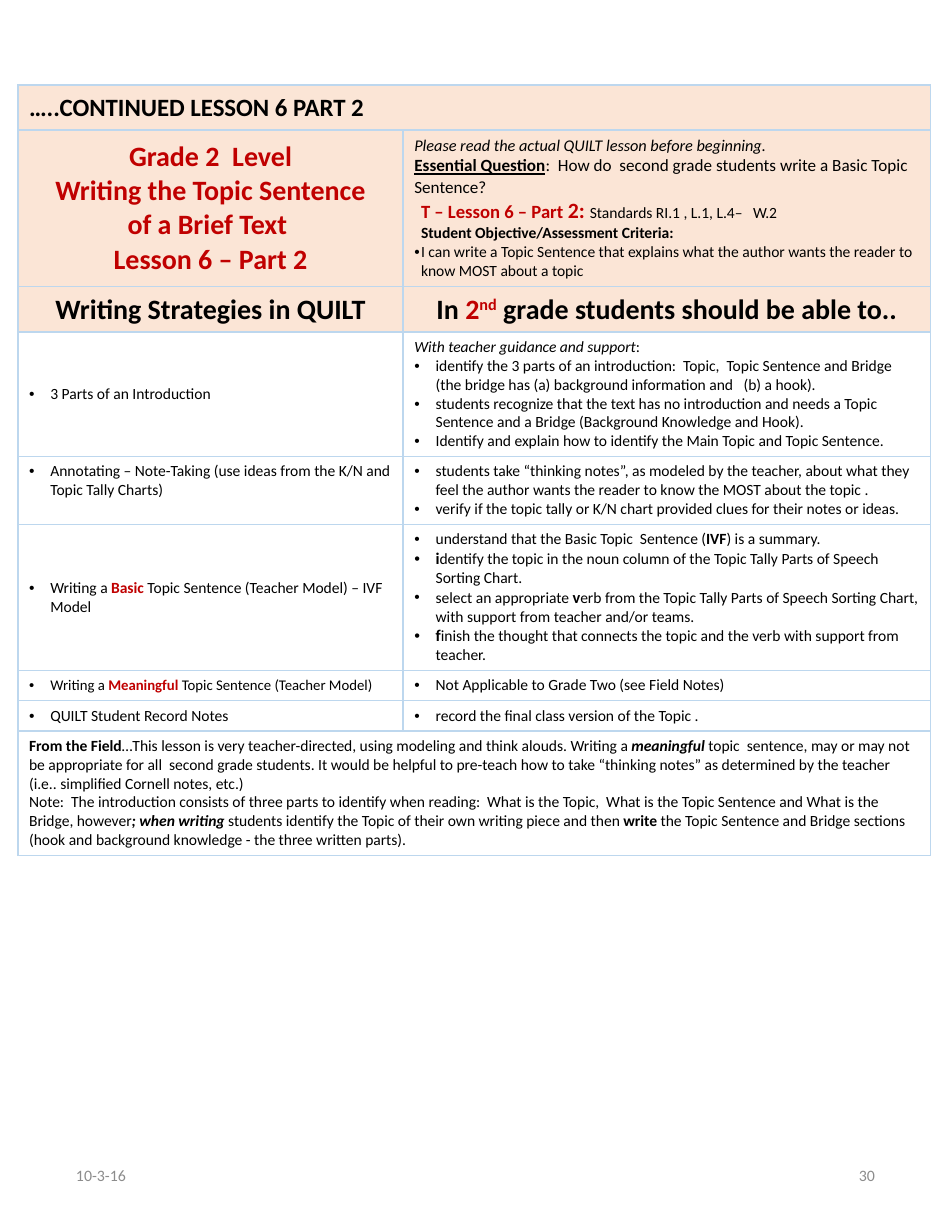
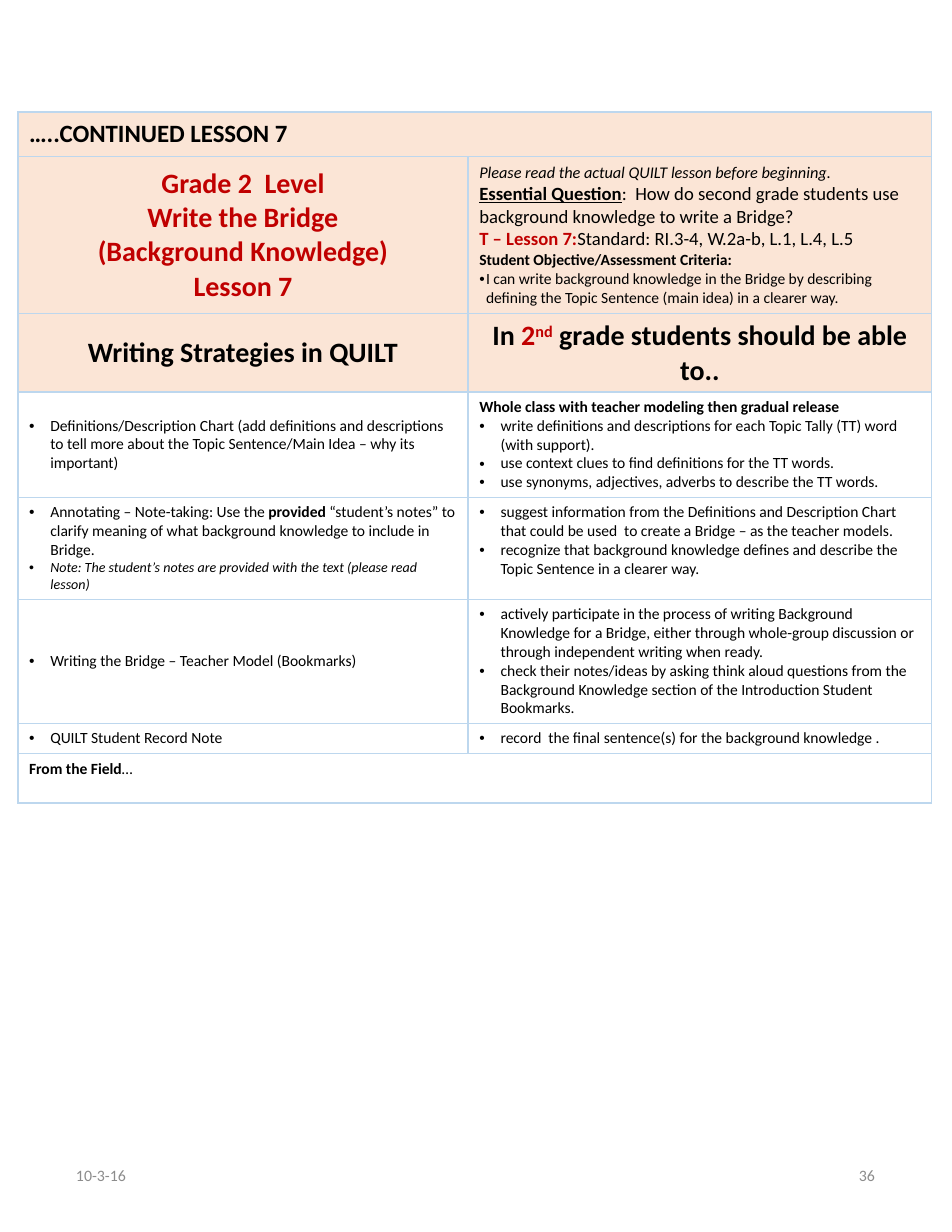
from lxml import etree
from pptx import Presentation
from pptx.dml.color import RGBColor
from pptx.enum.text import MSO_ANCHOR, PP_ALIGN
from pptx.oxml.ns import qn
from pptx.util import Inches, Pt

LEFT, CENTER, RIGHT = PP_ALIGN.LEFT, PP_ALIGN.CENTER, PP_ALIGN.RIGHT
TOP, MIDDLE = MSO_ANCHOR.TOP, MSO_ANCHOR.MIDDLE

FONT = "Calibri"
BLACK = RGBColor(0, 0, 0)
RED = RGBColor(0xC0, 0, 0)
GREY = RGBColor(0x8C, 0x8C, 0x8C)
PEACH = RGBColor(0xFB, 0xE5, 0xD6)
WHITE = RGBColor(0xFF, 0xFF, 0xFF)
BORDER = "BDD7EE"
HEADER_ROWS = 3

# Paragraph style: alignment, left margin, first-line indent, bullet
STYLES = {
    "plain": (LEFT, 0, 0, False),
    "center": (CENTER, 0, 0, False),
    "right": (RIGHT, 0, 0, False),
    "inset": (LEFT, 0.06, 0, False),
    "bullet": (LEFT, 0.19, -0.19, True),
    "criterion": (LEFT, 0.06, -0.06, True),
}


def write(frame, paragraphs, color=BLACK):
    """Write (style, span, ...) paragraphs; a span is (text, size, marks).

    Marks: b bold, i italic, u underline, r red, s superscript.
    """
    for index, (style, *spans) in enumerate(paragraphs):
        para = frame.paragraphs[0] if index == 0 else frame.add_paragraph()
        para.alignment, left, indent, bulleted = STYLES[style]
        props = para._p.get_or_add_pPr()
        props.set("marL", str(Inches(left)))
        props.set("indent", str(Inches(indent)))
        if bulleted:
            etree.SubElement(props, qn("a:buFont")).set("typeface", "Arial")
            etree.SubElement(props, qn("a:buChar")).set("char", "•")
        else:
            etree.SubElement(props, qn("a:buNone"))
        for text, size, marks in spans:
            span = para.add_run()
            span.text = text
            font = span.font
            font.name, font.size = FONT, Pt(size)
            font.bold, font.italic, font.underline = (m in marks for m in "biu")
            font.color.rgb = RED if "r" in marks else color
            if "s" in marks:
                span._r.get_or_add_rPr().set("baseline", "30000")


def format_cell(cell, fill, anchor):
    cell.vertical_anchor = anchor
    props = cell._tc.get_or_add_tcPr()
    for side in ("a:lnL", "a:lnR", "a:lnT", "a:lnB"):
        line = etree.SubElement(props, qn(side), w=str(Pt(1)))
        solid = etree.SubElement(line, qn("a:solidFill"))
        etree.SubElement(solid, qn("a:srgbClr"), val=BORDER)
    cell.fill.solid()
    cell.fill.fore_color.rgb = fill


READ_FIRST = ("plain", ("Please read the actual QUILT lesson before beginning.", 10.5, "i"))
OBJECTIVE = ("Student Objective/Assessment Criteria:", 10, "b")
COLUMN_HEADS = (
    [("center", ("Writing Strategies in QUILT", 18, "b"))],
    [("center", ("In ", 18, "b"), ("2", 18, "br"), ("nd", 18, "brs"),
      (" grade students should be able to..", 18, "b"))],
)

# Each strategy: row height, left paragraphs, right paragraphs.
# A plain string stands for one 10 pt bullet.
LESSONS = [
    {
        "top": 0.76, "columns": (3.44, 4.71), "page": "30",
        "header_heights": (0.4, 1.4, 0.4), "field_height": 1.11,
        "banner": "…..CONTINUED LESSON 6 PART 2",
        "title": ["Grade 2  Level", "Writing the Topic Sentence",
                  "of a Brief Text ", "Lesson 6 – Part 2"],
        "goals": [
            READ_FIRST,
            ("plain", ("Essential Question", 11, "bu"),
             (":  How do  second grade students write a Basic Topic Sentence?", 11, "")),
            ("inset", ("T – Lesson 6 – Part ", 12, "br"), ("2: ", 14, "br"),
             ("Standards RI.1 , L.1, L.4–   W.2", 10, "")),
            ("inset", OBJECTIVE),
            ("criterion", ("I can write a Topic Sentence that explains what the author wants "
                           "the reader to know MOST about a topic", 10, "")),
        ],
        "strategies": [
            (1.11, ["3 Parts of an Introduction"], [
                ("plain", ("With teacher guidance and support", 10, "i"), (":", 10, "")),
                "identify the 3 parts of an introduction:  Topic,  Topic Sentence and Bridge "
                "(the bridge has (a) background information and   (b) a hook).",
                "students recognize that the text has no introduction and needs a Topic "
                "Sentence and a Bridge (Background Knowledge and Hook).",
                "Identify and explain how to identify the Main Topic and Topic Sentence.",
            ]),
            (0.6, ["Annotating – Note-Taking (use ideas from the K/N and Topic Tally Charts)"], [
                "students take “thinking notes”, as modeled by the teacher, about what they "
                "feel the author wants the reader to know the MOST about the topic .",
                "verify if the topic tally or K/N chart provided clues for their notes or ideas.",
            ]),
            (1.3, [
                ("bullet", ("Writing a ", 10, ""), ("Basic ", 10, "br"),
                 ("Topic Sentence (Teacher Model) – IVF Model", 10, "")),
            ], [
                ("bullet", ("understand that the Basic Topic  Sentence (", 10, ""),
                 ("IVF", 10, "b"), (") is a summary.", 10, "")),
                ("bullet", ("i", 10.5, "b"),
                 ("dentify the topic in the noun column of the Topic Tally Parts of Speech "
                  "Sorting Chart.", 10, "")),
                ("bullet", ("select an appropriate ", 10, ""), ("v", 10.5, "b"),
                 ("erb from the Topic Tally Parts of Speech Sorting Chart, with support from "
                  "teacher and/or teams.", 10, "")),
                ("bullet", ("f", 10.5, "b"),
                 ("inish the thought that connects the topic and the verb with support from "
                  "teacher.", 10, "")),
            ]),
            (0.27, [
                ("bullet", ("Writing a ", 9.5, ""), ("Meaningful ", 9.5, "br"),
                 ("Topic Sentence (Teacher Model)", 9.5, "")),
            ], ["Not Applicable to Grade Two (see Field Notes)"]),
            (0.27, ["QUILT Student Record Notes"],
             ["record the final class version of the Topic ."]),
        ],
        "field": [
            ("plain", ("From the Field", 10, "b"),
             ("…This lesson is very teacher-directed, using modeling and think alouds. "
              "Writing a ", 10, ""),
             ("meaningful ", 10, "bi"),
             ("topic  sentence, may or may not be appropriate for all  second grade students. "
              "It would be helpful to pre-teach how to take “thinking notes” as determined by "
              "the teacher (i.e.. simplified Cornell notes, etc.)", 10, "")),
            ("plain",
             ("Note:  The introduction consists of three parts to identify when reading:  What "
              "is the Topic,  What is the Topic Sentence and What is the Bridge, however", 10, ""),
             ("; when writing ", 10, "bi"),
             ("students identify the Topic of their own writing piece and then ", 10, ""),
             ("write", 10, "b"),
             (" the Topic Sentence and Bridge sections (hook and background knowledge - the "
              "three written parts).", 10, "")),
        ],
    },
    {
        "top": 1, "columns": (4.02, 4.14), "page": "36",
        "header_heights": (0.4, 1.4, 0.7), "field_height": 0.44,
        "banner": "…..CONTINUED LESSON 7",
        "title": ["Grade 2  Level", "Write the Bridge", "(Background Knowledge)", "Lesson 7"],
        "goals": [
            READ_FIRST,
            ("plain", ("Essential Question", 12, "bu"),
             (":  How do second grade students use background knowledge to write a Bridge?",
              12, "")),
            ("plain", ("T – Lesson 7:", 12, "br"),
             ("Standard: RI.3-4, W.2a-b, L.1, L.4, L.5", 12, "")),
            ("plain", OBJECTIVE),
            ("criterion", ("I can write background knowledge in the Bridge by describing "
                           "defining the Topic Sentence (main idea) in a clearer way.", 10, "")),
        ],
        "strategies": [
            (0.94, ["Definitions/Description Chart (add definitions and descriptions to tell "
                    "more about the Topic Sentence/Main Idea – why its important)"], [
                ("plain", ("Whole class with teacher modeling then gradual release", 10, "b")),
                "write definitions and descriptions for each Topic Tally (TT) word "
                "(with support).",
                "use context clues to find definitions for the TT words.",
                "use synonyms, adjectives, adverbs to describe the TT words.",
            ]),
            (0.91, [
                ("bullet", ("Annotating – Note-taking: Use the ", 10, ""),
                 ("provided", 10, "b"),
                 (" “student’s notes” to clarify meaning of what background knowledge to "
                  "include in Bridge.", 10, "")),
                ("bullet", ("Note: The student’s notes are provided with the text (please read "
                            "lesson)", 9, "i")),
            ], [
                "suggest information from the Definitions and Description Chart that could be "
                "used  to create a Bridge – as the teacher models.",
                "recognize that background knowledge defines and describe the Topic Sentence "
                "in a clearer way.",
            ]),
            (1.11, ["Writing the Bridge – Teacher Model (Bookmarks)"], [
                "actively participate in the process of writing Background Knowledge for a "
                "Bridge, either through whole-group discussion or through independent writing "
                "when ready.",
                "check their notes/ideas by asking think aloud questions from the Background "
                "Knowledge section of the Introduction Student Bookmarks.",
            ]),
            (0.27, ["QUILT Student Record Note"],
             ["record  the final sentence(s) for the background knowledge ."]),
        ],
        "field": [("plain", ("From the Field", 10, "b"), ("…", 10, ""))],
    },
]

deck = Presentation()
deck.slide_width, deck.slide_height = Inches(8.5), Inches(11)
blank_layout = deck.slide_layouts[6]

for lesson in LESSONS:
    page = deck.slides.add_slide(blank_layout)
    strategies = lesson["strategies"]
    heights = [*lesson["header_heights"], *(s[0] for s in strategies), lesson["field_height"]]
    contents = [
        ([("plain", (lesson["banner"], 16, "b"))],),
        ([("center", (line, 18, "br")) for line in lesson["title"]], lesson["goals"]),
        COLUMN_HEADS,
        *(s[1:] for s in strategies),
        (lesson["field"],),
    ]

    table = page.shapes.add_table(
        len(heights), 2, Inches(0.16), Inches(lesson["top"]),
        Inches(sum(lesson["columns"])), Inches(sum(heights))).table
    table.first_row = table.horz_banding = False
    for column, width in zip(table.columns, lesson["columns"]):
        column.width = Inches(width)

    for row, (height, texts) in enumerate(zip(heights, contents)):
        table.rows[row].height = Inches(height)
        is_header = row < HEADER_ROWS
        is_note_row = row == HEADER_ROWS + 1
        for col in range(2):
            in_middle = is_header or (col == 0 and len(texts) == 2 and not is_note_row)
            format_cell(table.cell(row, col), PEACH if is_header else WHITE,
                        MIDDLE if in_middle else TOP)
        if len(texts) == 1:
            table.cell(row, 0).merge(table.cell(row, 1))
        for col, paragraphs in enumerate(texts):
            write(table.cell(row, col).text_frame,
                  [("bullet", (p, 10, "")) if isinstance(p, str) else p for p in paragraphs])

    for left, style, text in ((0.58, "plain", "10-3-16"), (6, "right", lesson["page"])):
        box = page.shapes.add_textbox(Inches(left), Inches(10.2), Inches(1.91), Inches(0.59))
        box.text_frame.word_wrap = True
        box.text_frame.vertical_anchor = MIDDLE
        write(box.text_frame, [(style, (text, 10.2, ""))], GREY)

deck.save("out.pptx")
